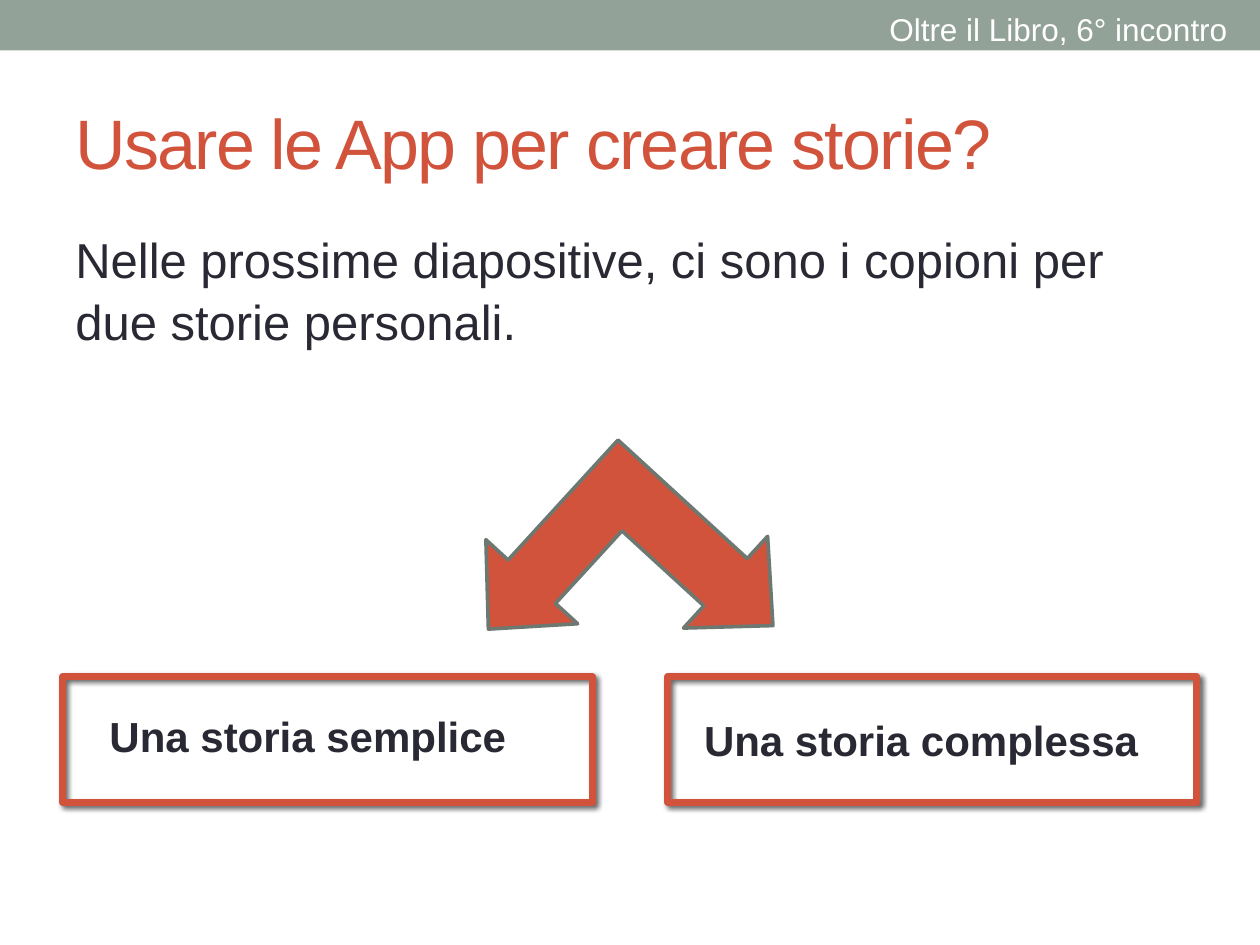
from lxml.etree import SubElement
from pptx import Presentation
from pptx.dml.color import RGBColor
from pptx.enum.shapes import MSO_SHAPE as Shape
from pptx.enum.text import MSO_ANCHOR as Anchor, MSO_AUTO_SIZE as AutoSize, PP_ALIGN as Align
from pptx.oxml.ns import qn
from pptx.util import Emu, Pt

PX = 9144
SAGE = RGBColor(0x93, 0xA2, 0x99)
DARK_SAGE = RGBColor(0x6D, 0x78, 0x71)
BRICK = RGBColor(0xD2, 0x53, 0x3C)
INK = RGBColor(0x29, 0x29, 0x34)
WHITE = RGBColor(0xFF, 0xFF, 0xFF)


def scaled(*lengths):
    """Turn px lengths into EMU."""
    return [Emu(length * PX) for length in lengths]


def add_text(page, area, text, size, color, bold=False, wrap=True, fit=False,
             align=Align.LEFT, anchor=Anchor.TOP, leading=1.0, tracking=0):
    """Add a text box holding one run."""
    box = page.shapes.add_textbox(*scaled(*area))
    frame = box.text_frame
    frame.word_wrap = wrap
    frame.auto_size = AutoSize.SHAPE_TO_FIT_TEXT if fit else AutoSize.NONE
    frame.vertical_anchor = anchor
    para = frame.paragraphs[0]
    para.alignment = align
    para.line_spacing = leading
    span = para.add_run()
    span.text = text
    font = span.font
    font.name, font.size, font.bold = "Arial", Pt(size), bold
    font.color.rgb = color
    if tracking:
        span._r.get_or_add_rPr().set("spc", str(tracking * 100))


def add_block(page, kind, area, fill=None, line=None, width=0):
    """Add a preset shape with an optional fill and round-joined outline."""
    shape = page.shapes.add_shape(kind, *scaled(*area))
    shape.shadow.inherit = False
    if fill is None:
        shape.fill.background()
    else:
        shape.fill.solid()
        shape.fill.fore_color.rgb = fill
    if line is None:
        shape.line.fill.background()
    else:
        shape.line.color.rgb = line
        shape.line.width = Pt(width)
        SubElement(shape.line._get_or_add_ln(), qn("a:round"))
    return shape


def add_shadow(shape, blur, distance, angle, opacity):
    """Give a shape a black outer shadow."""
    effects = shape._element.spPr.find(qn("a:effectLst"))
    shadow = SubElement(effects, qn("a:outerShdw"), blurRad=str(Pt(blur)),
                        dist=str(Pt(distance)), dir=str(angle * 60000))
    color = SubElement(shadow, qn("a:srgbClr"), val="000000")
    SubElement(color, qn("a:alpha"), val=str(opacity * 1000))


def add_split_arrow(page):
    """Add the two-headed arrow that points at both stories."""
    arrow = add_block(page, Shape.LEFT_UP_ARROW, (392, 361, 214, 204), BRICK, DARK_SAGE, 2.08)
    arrow.rotation = 222.5
    for index, value in enumerate((0.25, 0.242, 0.25)):
        arrow.adjustments[index] = value


def main():
    """Build the slide and save it."""
    deck = Presentation()
    deck.slide_width, deck.slide_height = scaled(1000, 750)
    page = deck.slides.add_slide(deck.slide_layouts[6])

    add_block(page, Shape.RECTANGLE, (0, 0, 1000, 40), SAGE)
    add_text(page, (50, 58, 900, 108), "Usare le App per creare storie?", 40, BRICK,
             anchor=Anchor.MIDDLE, tracking=-1)
    add_text(page, (696, 3, 291, 40), "Oltre il Libro, 6° incontro", 18, WHITE,
             wrap=False, fit=True)
    add_text(page, (50, 175, 900, 533),
             "Nelle prossime diapositive, ci sono i copioni per due storie personali.",
             28, INK, leading=1.05)

    for left in (50, 530):
        story_frame = add_block(page, Shape.RECTANGLE, (left, 537, 420, 100), None, BRICK, 4)
        add_shadow(story_frame, 3, 2, 45, 60)
    add_text(page, (77, 559, 338, 50), "Una storia semplice", 24, INK, bold=True,
             wrap=False, fit=True)
    add_text(page, (530, 562, 402, 50), "Una storia complessa", 24, INK, bold=True,
             fit=True, align=Align.CENTER)
    add_split_arrow(page)

    deck.save("out.pptx")


if __name__ == "__main__":
    main()
